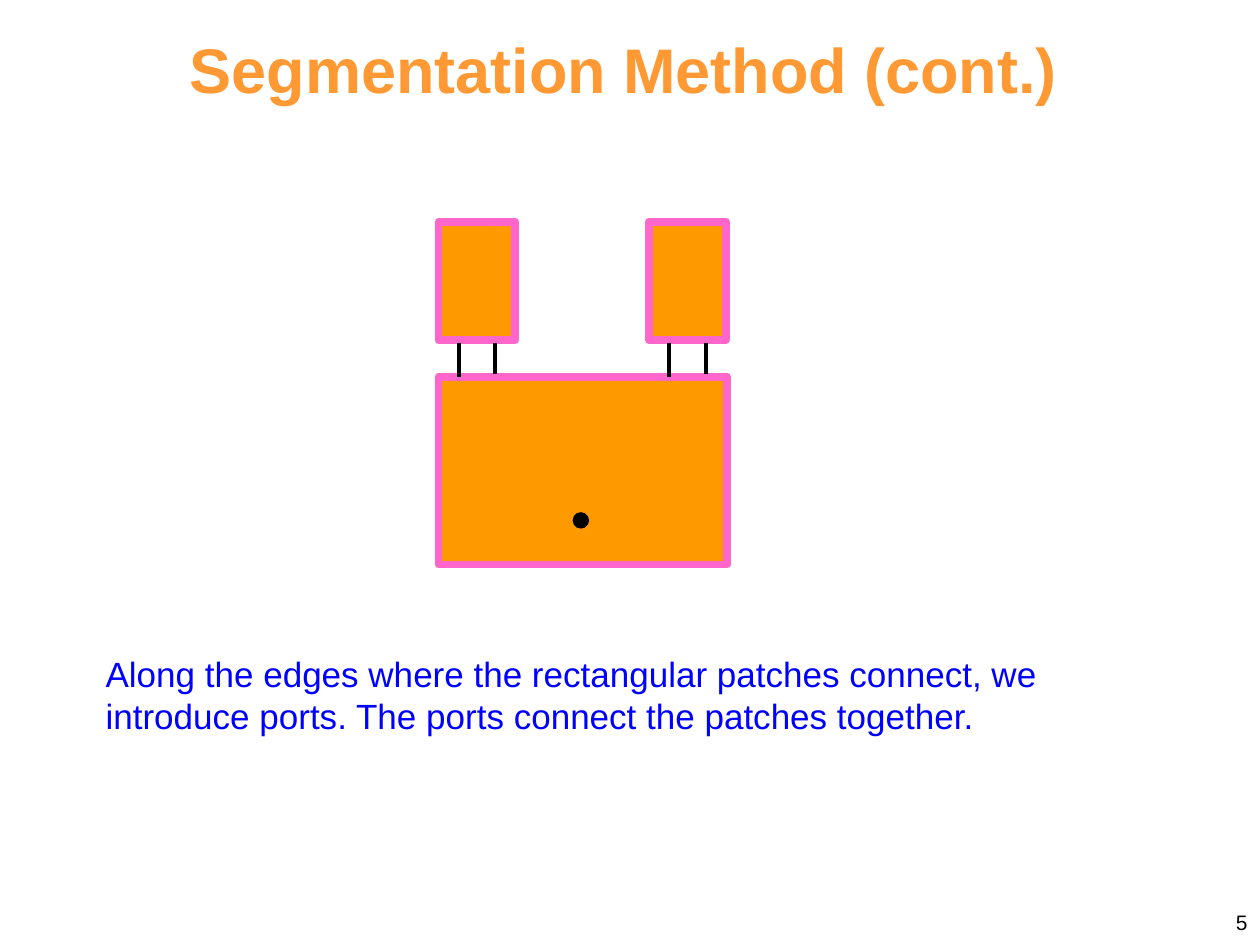
from lxml import etree
from pptx import Presentation
from pptx import util as u
from pptx.dml.color import RGBColor
from pptx.enum import shapes, text
from pptx.oxml.ns import qn

COLORS = {"title": "FF9933", "body": "0000FF", "patch": "FF9900", "edge": "FF66CC", "ink": "000000"}
FONT = "Arial"
WIDTH, HEIGHT = u.Inches(10), u.Inches(7.5)
COLUMNS, ROWS = 1000, 750


def cells(left, top, width, height):
    column, row = WIDTH / COLUMNS, HEIGHT / ROWS
    return [round(n * size) for n, size in zip((left, top, width, height), (column, row, column, row))]


def color(name):
    return RGBColor.from_string(COLORS[name])


def add_words(slide, box, words, size, ink, align, bold=False,
              anchor=text.MSO_ANCHOR.TOP, inset=0.05):
    frame = slide.shapes.add_textbox(*cells(*box)).text_frame
    frame.word_wrap = True
    frame.vertical_anchor = anchor
    frame.margin_top = u.Inches(inset)
    paragraph = frame.paragraphs[0]
    paragraph.alignment = align
    run = paragraph.add_run()
    run.text = words
    run.font.name, run.font.size, run.font.bold = FONT, u.Pt(size), bold
    run.font.color.rgb = color(ink)


def add_solid(group, kind, box, fill, line, weight):
    shape = group.shapes.add_shape(kind, *cells(*box))
    shape.shadow.inherit = False
    shape.fill.solid()
    shape.fill.fore_color.rgb = color(fill)
    shape.line.color.rgb = color(line)
    shape.line.width = u.Pt(weight)


def add_port(group, x, top, length):
    left, start, _, drop = cells(x, top, 0, length)
    line = group.shapes.add_connector(shapes.MSO_CONNECTOR.STRAIGHT, left, start, left, start + drop)
    line.line.color.rgb = color("ink")
    line.line.width = u.Pt(2.25)
    etree.SubElement(line._element.spPr, qn("a:effectLst"))


def add_patches(slide, box):
    left, top, width, height = box
    group = slide.shapes.add_group_shape()
    rectangle = shapes.MSO_SHAPE.RECTANGLE
    patch_width, patch_height, body_height = 61, 94, 149
    body_top = top + height - body_height
    add_solid(group, rectangle, (left, body_top, width, body_height), "patch", "edge", 4.5)
    add_solid(group, shapes.MSO_SHAPE.OVAL, (left + 107, body_top + 108, 12, 12), "ink", "ink", 0.75)
    arms = (left, left + width - patch_width - 1)
    for arm in arms:
        add_solid(group, rectangle, (arm, top, patch_width, patch_height), "patch", "edge", 4.5)
    for arm in arms:
        for offset, length in ((16, 27), (45, 25)):
            add_port(group, arm + offset, top + 96, length)


def build_slide(presentation):
    slide = presentation.slides.add_slide(presentation.slide_layouts[6])
    align = text.PP_ALIGN
    add_words(slide, (74, 513, 840, 77),
              "Along the edges where the rectangular patches connect, we introduce ports. "
              "The ports connect the patches together.", 20, "body", align.LEFT)
    add_patches(slide, (348, 176, 229, 272))
    add_words(slide, (131, 28, 728, 52), "Segmentation Method (cont.)", 36, "title",
              align.CENTER, bold=True, anchor=text.MSO_ANCHOR.MIDDLE)
    add_words(slide, (767, 698, 233, 52), "5", 12, "ink", align.RIGHT, inset=0.24)


def main():
    presentation = Presentation()
    presentation.slide_width, presentation.slide_height = WIDTH, HEIGHT
    build_slide(presentation)
    presentation.save("out.pptx")


if __name__ == "__main__":
    main()
